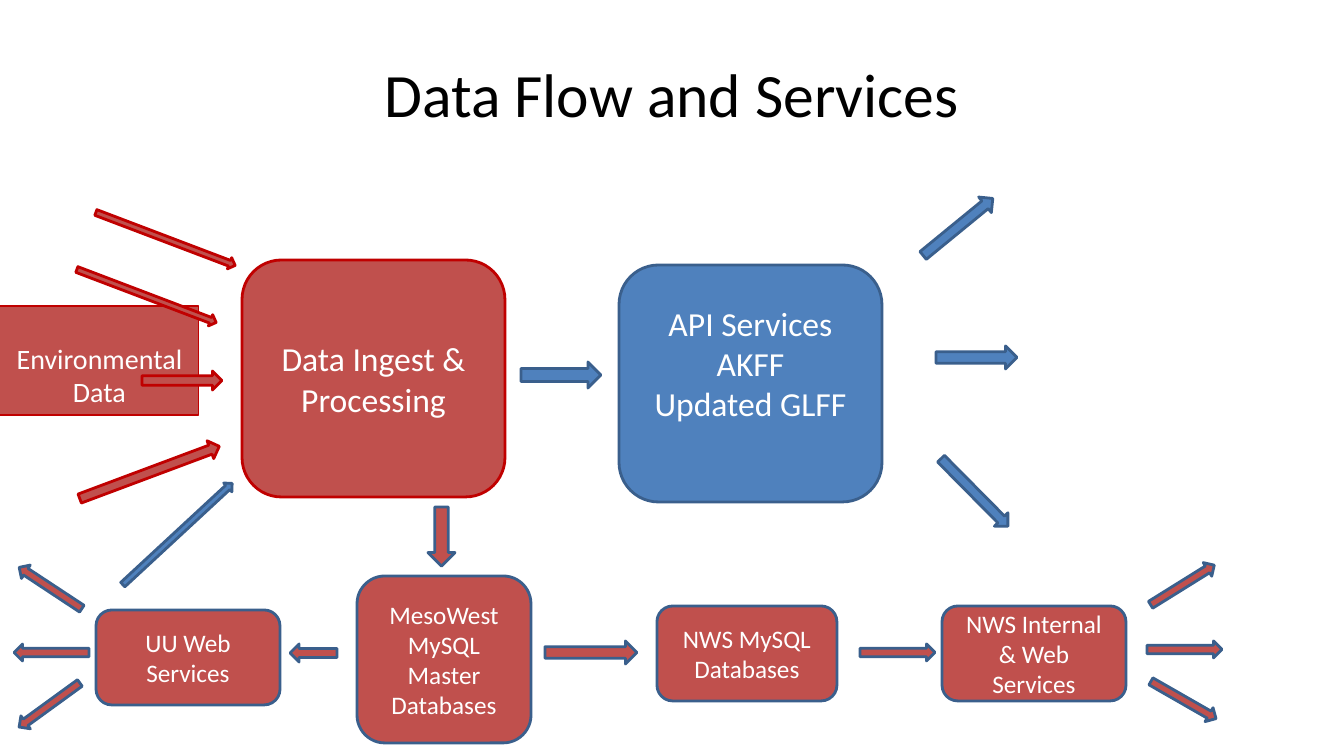
from dataclasses import dataclass

from pptx import Presentation
from pptx.dml.color import RGBColor
from pptx.enum.shapes import MSO_SHAPE
from pptx.enum.text import MSO_ANCHOR, PP_ALIGN
from pptx.util import Emu, Pt

PX = 914400 / 100.8


@dataclass(frozen=True)
class Theme:
    red: str = "C0504D"
    blue: str = "4F81BD"
    red_edge: str = "C00000"
    blue_edge: str = "3A5F8C"
    ink: str = "000000"
    paper: str = "FFFFFF"
    face: str = "Calibri"
    title: int = 44
    stage: int = 24
    source: int = 20
    store: int = 18
    edge: int = 2
    thin: float = 0.75


THEME = Theme()
INPUT = (THEME.red, THEME.red_edge)
SERVICE = (THEME.blue, THEME.blue_edge)
STORE = (THEME.red, THEME.blue_edge)


def px(length):
    return Emu(round(length * PX))


def apply(target, values):
    for name, value in values.items():
        setattr(target, name, value)


def write(frame, lines, size, color, **layout):
    apply(frame, {"word_wrap": True, "vertical_anchor": MSO_ANCHOR.MIDDLE, **layout})
    for number, line in enumerate(lines):
        paragraph = frame.add_paragraph() if number else frame.paragraphs[0]
        paragraph.text = line
        paragraph.alignment = PP_ALIGN.CENTER
        apply(paragraph.font, {"name": THEME.face, "size": Pt(size)})
        paragraph.font.color.rgb = RGBColor.from_string(color)


def add_block(slide, kind, origin, place, colors, edge=THEME.edge):
    x, y, width, height = place
    block = slide.shapes.add_shape(
        kind, px(origin[0] + x), px(origin[1] + y), px(width), px(height))
    fill, line = colors
    block.shadow.inherit = False
    block.fill.solid()
    block.fill.fore_color.rgb = RGBColor.from_string(fill)
    block.line.color.rgb = RGBColor.from_string(line)
    block.line.width = Pt(edge)
    return block


def add_stage(slide, origin, place, colors, lines, size, **layout):
    stage = add_block(slide, MSO_SHAPE.ROUNDED_RECTANGLE, origin, place, colors)
    write(stage.text_frame, lines, size, THEME.paper, **layout)


def add_arrows(slide, origin, colors, arrows):
    for *place, angle in arrows:
        arrow = add_block(slide, MSO_SHAPE.RIGHT_ARROW, origin, place, colors)
        arrow.rotation = angle


def draw_title(slide, box):
    title = slide.shapes.title
    apply(title, dict(zip(("left", "top", "width", "height"), map(px, box))))
    write(title.text_frame, ["Data Flow and Services"], THEME.title, THEME.ink)


def draw_ingest(slide, box):
    x, y, width, height = box
    source = add_block(slide, MSO_SHAPE.RECTANGLE, (x, y), (0, 98, 199, 109),
                       INPUT, THEME.thin)
    write(source.text_frame, ["Environmental", "Data"], THEME.source, THEME.paper,
          vertical_anchor=MSO_ANCHOR.TOP, margin_top=px(35))
    add_stage(slide, (x, y), (width - 263, 52, 263, 237), INPUT,
              ["Data Ingest & Processing"], THEME.stage)
    add_arrows(slide, (x, y), INPUT, [
        (91, 25, 149, 12, 20.8),
        (72, 82, 149, 12, 20.8),
        (142, 163, 80, 19, 0),
        (75, 255, 149, 19, 339.5),
    ])
    add_arrows(slide, (x, y), SERVICE, [(103, height - 80, 149, 12, 317.2)])
    add_arrows(slide, (x, y), STORE, [(412, height - 85, 59, 27, 90)])


def draw_api(slide, box):
    x, y, width, height = box
    add_stage(slide, (x, y), (98, 68, 263, 237), SERVICE,
              ["API Services", "AKFF", "Updated GLFF"], THEME.stage,
              margin_bottom=px(46))
    add_arrows(slide, (x, y), SERVICE, [
        (0, 165, 80, 26, 0),
        (width - 90, 20, 90, 20, 320.7),
        (width - 67, 149, 81, 23, 0),
        (width - 76, height - 44, 95, 19, 45.3),
    ])


def draw_databases(slide, box):
    x, y, width, height = box
    stages = [
        (96, 44, 184, 95, ["UU Web Services"]),
        (357, 10, 174, 167, ["MesoWest", "MySQL Master Databases"]),
        (657, 40, 180, 95, ["NWS MySQL Databases"]),
        (942, 40, 184, 95, ["NWS Internal & Web Services"]),
    ]
    for *place, lines in stages:
        add_stage(slide, (x, y), place, STORE, lines, THEME.store)
    add_arrows(slide, (x, y), STORE, [
        (290, 78, 47, 18, 180),
        (545, 75, 92, 23, 0),
        (860, 78, 75, 17, 0),
        (13, 14, 75, 16, 213.4),
        (14, 78, 75, 17, 180),
        (12, 131, 75, 16, 144),
        (width - 77, 11, 75, 16, 328.1),
        (width - 75, 75, 75, 17, 0),
        (width - 76, 126, 75, 16, 29.8),
    ])


def main():
    deck = Presentation()
    apply(deck, {"slide_width": px(1344), "slide_height": px(756)})
    slide = deck.slides.add_slide(deck.slide_layouts[5])
    draw_title(slide, (67, 30, 1210, 126))
    draw_ingest(slide, (0, 208, 505, 400))
    draw_api(slide, (521, 197, 482, 330))
    draw_databases(slide, (0, 566, 1222, 177))
    deck.save("out.pptx")


if __name__ == "__main__":
    main()
